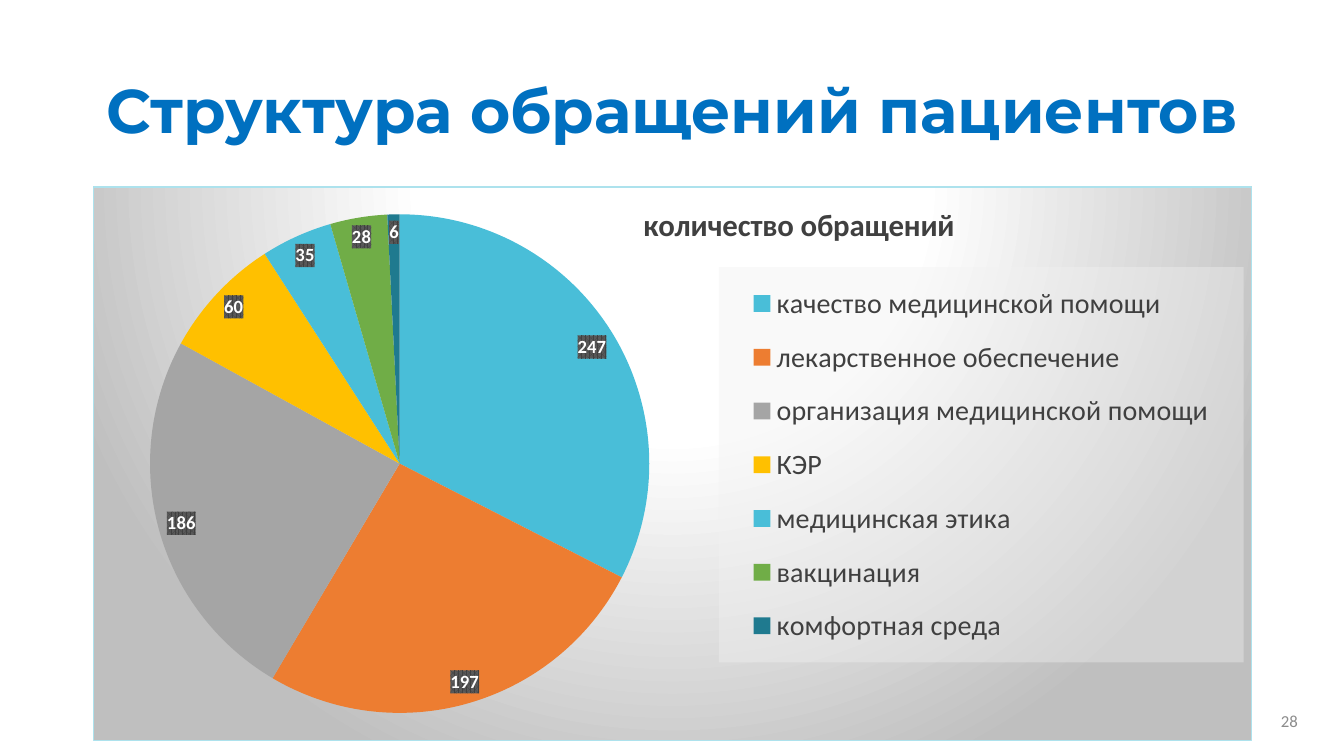
import pptx
import pptx.util
import pptx.chart.data
import pptx.dml.color
import pptx.enum.chart
import pptx.enum.text
import pptx.oxml
import pptx.oxml.ns

RGBColor = pptx.dml.color.RGBColor
TITLE_BLUE = RGBColor(0x00, 0x70, 0xC0)
DARK_GRAY = RGBColor(0x40, 0x40, 0x40)
NUMBER_GRAY = RGBColor(0x8C, 0x8C, 0x8C)
BLACK = RGBColor(0x00, 0x00, 0x00)
WHITE = RGBColor(0xFF, 0xFF, 0xFF)
SILVER = RGBColor(0xBF, 0xBF, 0xBF)
PALE_GRAY = RGBColor(0xF2, 0xF2, 0xF2)
PATTERN_GRAY = RGBColor(0x59, 0x59, 0x59)
BORDER_BLUE = RGBColor(0xAD, 0xE2, 0xED)
SKY = RGBColor(0x49, 0xBE, 0xD8)
ORANGE = RGBColor(0xED, 0x7D, 0x31)
GRAY = RGBColor(0xA5, 0xA5, 0xA5)
YELLOW = RGBColor(0xFF, 0xC0, 0x00)
GREEN = RGBColor(0x70, 0xAD, 0x47)
TEAL = RGBColor(0x1F, 0x7A, 0x8F)

SLIDE_WIDTH = pptx.util.Inches(13.33)
SLIDE_HEIGHT = pptx.util.Inches(7.5)
BODY_FONT = "Calibri"
CHART_TITLE = "количество обращений"
APPEALS = [
    ("качество медицинской помощи", 247, SKY),
    ("лекарственное обеспечение", 197, ORANGE),
    ("организация медицинской помощи", 186, GRAY),
    ("КЭР", 60, YELLOW),
    ("медицинская этика", 35, SKY),
    ("вакцинация", 28, GREEN),
    ("комфортная среда", 6, TEAL),
]

CHART_FILL = f"""<a:gradFill><a:gsLst>
<a:gs pos="0"><a:srgbClr val="{WHITE}"/></a:gs>
<a:gs pos="39000"><a:srgbClr val="{WHITE}"/></a:gs>
<a:gs pos="100000"><a:srgbClr val="{SILVER}"/></a:gs></a:gsLst>
<a:path path="circle"><a:fillToRect l="50000" t="-80000" r="50000" b="180000"/></a:path>
</a:gradFill><a:ln w="9525"><a:solidFill><a:srgbClr val="{BORDER_BLUE}"/></a:solidFill></a:ln>"""
LEGEND_FILL = f"""<a:solidFill><a:srgbClr val="{PALE_GRAY}">
<a:alpha val="39000"/></a:srgbClr></a:solidFill><a:ln><a:noFill/></a:ln>"""
LABEL_FILL = f"""<a:pattFill prst="pct75"><a:fgClr><a:srgbClr val="{DARK_GRAY}"/></a:fgClr>
<a:bgClr><a:srgbClr val="{PATTERN_GRAY}"/></a:bgClr></a:pattFill><a:ln><a:noFill/></a:ln>"""


def share_box(left, top, width, height):
    return (int(left * SLIDE_WIDTH), int(top * SLIDE_HEIGHT),
            int(width * SLIDE_WIDTH), int(height * SLIDE_HEIGHT))


def style_font(font, size, color, bold=False, name=BODY_FONT):
    font.name = name
    font.size = pptx.util.Pt(size)
    font.bold = bold
    font.color.rgb = color


def chart_element(markup):
    namespaces = pptx.oxml.ns.nsdecls("c", "a")
    return pptx.oxml.parse_xml(markup.replace(">", f" {namespaces}>", 1))


def add_fill(parent, markup):
    properties = chart_element(f"<c:spPr>{markup}</c:spPr>")
    parent.find(pptx.oxml.ns.qn("c:txPr")).addprevious(properties)


def set_layout(parent, position, **shares):
    for layout in parent.findall(pptx.oxml.ns.qn("c:layout")):
        parent.remove(layout)
    target = '<c:layoutTarget val="inner"/>' if "inner" in shares else ""
    shares.pop("inner", None)
    modes = "".join(f'<c:{axis}Mode val="edge"/>' for axis in "xy")
    sizes = "".join(f'<c:{key} val="{share}"/>' for key, share in shares.items())
    layout = f"<c:layout><c:manualLayout>{target}{modes}{sizes}</c:manualLayout></c:layout>"
    parent.insert(position, chart_element(layout))


def place_title(slide, box):
    title = slide.shapes.title
    title.left, title.top, title.width, title.height = box
    frame = title.text_frame
    frame.text = "Структура обращений пациентов"
    frame.vertical_anchor = pptx.enum.text.MSO_ANCHOR.MIDDLE
    paragraph = frame.paragraphs[0]
    paragraph.alignment = pptx.enum.text.PP_ALIGN.CENTER
    paragraph.line_spacing = 0.9
    style_font(paragraph.runs[0].font, 44, TITLE_BLUE, True, "Montserrat")


def format_series(series):
    for index, (_, _, color) in enumerate(APPEALS):
        fill = series.points[index].format.fill
        fill.solid()
        fill.fore_color.rgb = color
    labels = series.data_labels
    labels.show_value = True
    labels.position = pptx.enum.chart.XL_LABEL_POSITION.BEST_FIT
    style_font(labels.font, 13.3, WHITE, True)
    add_fill(labels._element, LABEL_FILL)


def format_legend(chart):
    chart.has_legend = True
    legend = chart.legend
    legend.position = pptx.enum.chart.XL_LEGEND_POSITION.RIGHT
    legend.include_in_layout = False
    style_font(legend.font, 20, DARK_GRAY)
    set_layout(legend._element, 1, x=0.54, y=0.145, w=0.453, h=0.714)
    add_fill(legend._element, LEGEND_FILL)


def place_chart(slide, box):
    data = pptx.chart.data.CategoryChartData()
    data.categories = [name for name, _, _ in APPEALS]
    data.add_series(CHART_TITLE, [count for _, count, _ in APPEALS])
    chart = slide.shapes.add_chart(pptx.enum.chart.XL_CHART_TYPE.PIE, *box, data).chart
    style_font(chart.font, 10, BLACK)
    chart.has_title = True
    chart.chart_title.text_frame.text = CHART_TITLE
    run = chart.chart_title.text_frame.paragraphs[0].runs[0]
    style_font(run.font, 22, DARK_GRAY, True)
    set_layout(chart.chart_title._element, 1, x=0.47, y=0.02)
    plot = chart.plots[0]
    plot.vary_by_categories = True
    format_series(plot.series[0])
    format_legend(chart)
    plot_area = chart._chartSpace.find(".//" + pptx.oxml.ns.qn("c:plotArea"))
    set_layout(plot_area, 0, inner=True, x=0.049, y=0, w=0.431, h=1)
    add_fill(chart._chartSpace, CHART_FILL)


def place_number(slide, box):
    frame = slide.shapes.add_textbox(*box).text_frame
    frame.word_wrap = True
    frame.text = "28"
    frame.vertical_anchor = pptx.enum.text.MSO_ANCHOR.MIDDLE
    paragraph = frame.paragraphs[0]
    paragraph.alignment = pptx.enum.text.PP_ALIGN.RIGHT
    style_font(paragraph.runs[0].font, 12, NUMBER_GRAY)


def build_appeals_slide(presentation):
    slide = presentation.slides.add_slide(presentation.slide_layouts[5])
    left, width = 0.92 / 13.33, 11.5 / 13.33
    place_title(slide, share_box(left, 0.4 / 7.5, width, 1.45 / 7.5))
    place_chart(slide, share_box(left, 1.85 / 7.5, width, 5.5 / 7.5))
    place_number(slide, share_box(9.97 / 13.33, 6.95 / 7.5, 3 / 13.33, 0.4 / 7.5))


def main():
    presentation = pptx.Presentation()
    presentation.slide_width = SLIDE_WIDTH
    presentation.slide_height = SLIDE_HEIGHT
    build_appeals_slide(presentation)
    presentation.save("out.pptx")


if __name__ == "__main__":
    main()
